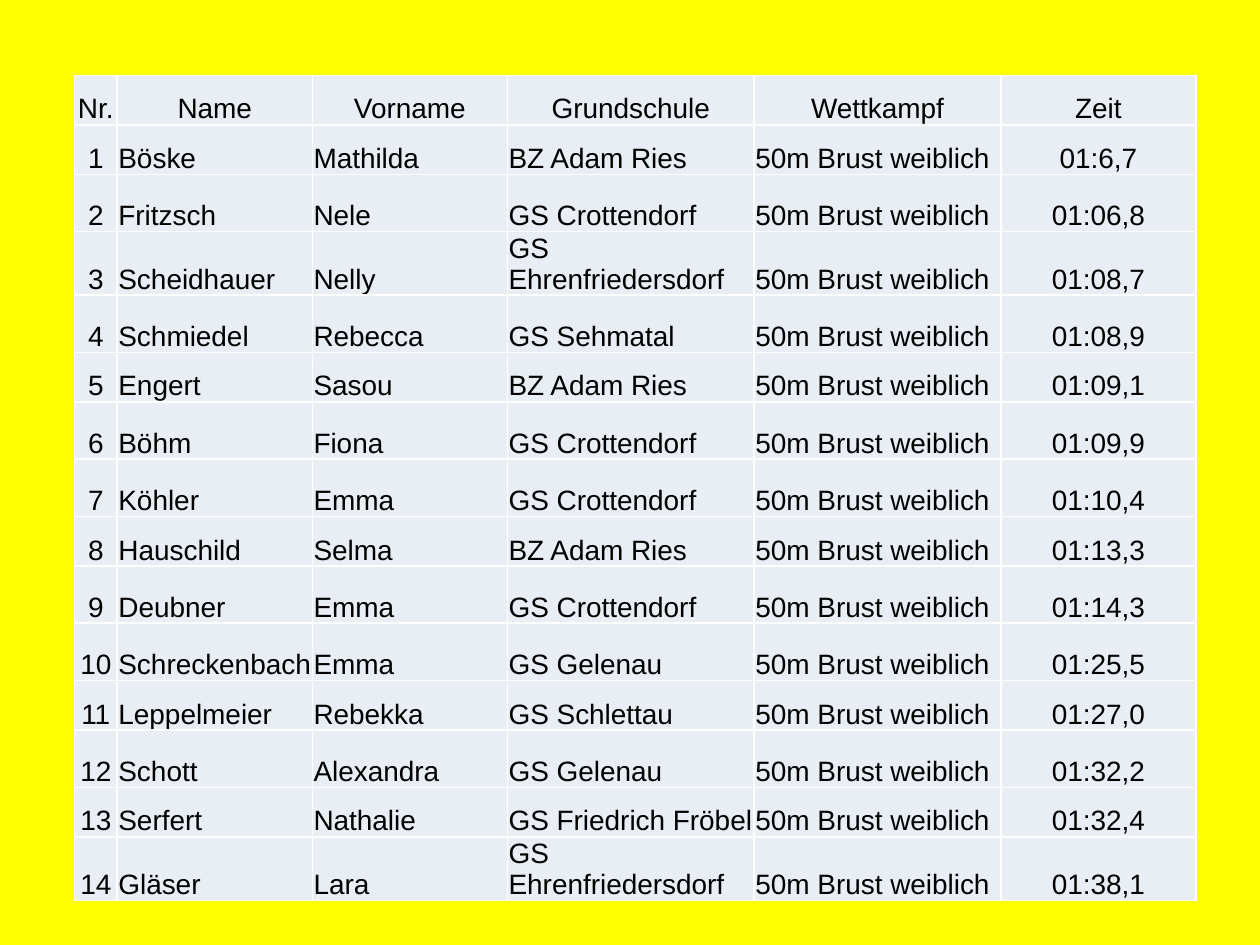
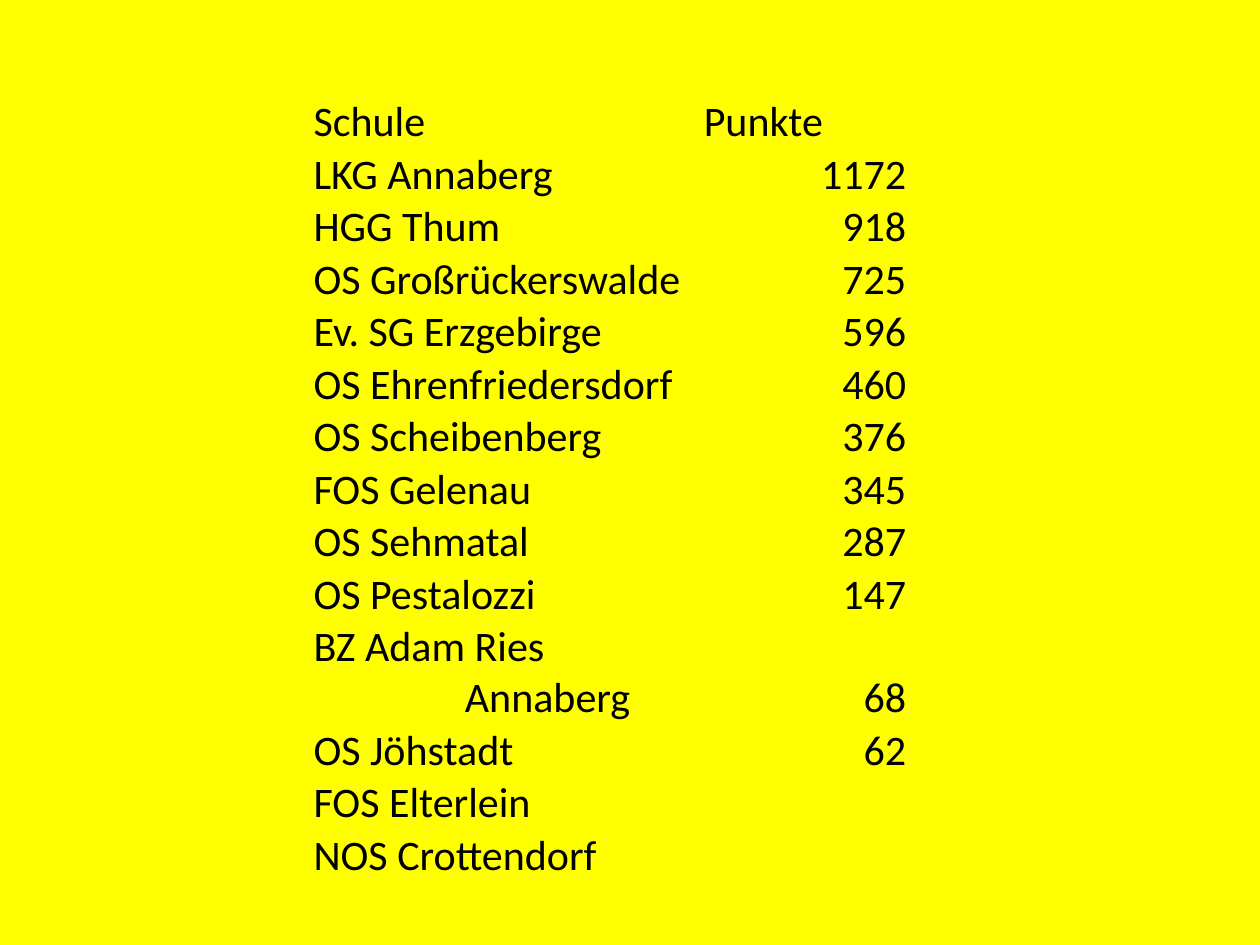
import pptx
import pptx.util
import pptx.dml.color
import pptx.enum.text
import pptx.oxml
from dataclasses import dataclass

Pt = pptx.util.Pt
PLAIN = "{2D5ABB26-0587-4C30-8999-92F81FD0307C}"
ALIGN = {
    "l": pptx.enum.text.PP_ALIGN.LEFT,
    "c": pptx.enum.text.PP_ALIGN.CENTER,
    "r": pptx.enum.text.PP_ALIGN.RIGHT,
}


@dataclass(frozen=True)
class Theme:
    page: str = "FFFF00"
    ink: str = "000000"
    cell: str = "E9EDF4"
    rule: str = "FFFFFF"
    rule_width: int = 1
    inset: float = 0.7


@dataclass(frozen=True)
class Style:
    """Look of one table; head and body give one alignment letter per column."""
    font: str
    size: int
    head: str
    body: str
    boxed: bool


THEME = Theme()
TIMES = Style("Arial", 16, "cccccc", "cllllc", True)
POINTS = Style("Calibri", 24, "ll", "lr", False)

EVENT = "50m Brust weiblich"
SWIMMERS = [
    ("Böske", "Mathilda", "BZ Adam Ries", "01:6,7"),
    ("Fritzsch", "Nele", "GS Crottendorf", "01:06,8"),
    ("Scheidhauer", "Nelly", "GS Ehrenfriedersdorf", "01:08,7"),
    ("Schmiedel", "Rebecca", "GS Sehmatal", "01:08,9"),
    ("Engert", "Sasou", "BZ Adam Ries", "01:09,1"),
    ("Böhm", "Fiona", "GS Crottendorf", "01:09,9"),
    ("Köhler", "Emma", "GS Crottendorf", "01:10,4"),
    ("Hauschild", "Selma", "BZ Adam Ries", "01:13,3"),
    ("Deubner", "Emma", "GS Crottendorf", "01:14,3"),
    ("Schreckenbach", "Emma", "GS Gelenau", "01:25,5"),
    ("Leppelmeier", "Rebekka", "GS Schlettau", "01:27,0"),
    ("Schott", "Alexandra", "GS Gelenau", "01:32,2"),
    ("Serfert", "Nathalie", "GS Friedrich Fröbel", "01:32,4"),
    ("Gläser", "Lara", "GS Ehrenfriedersdorf", "01:38,1"),
]
LOW_ROWS = {"Grundschule", "BZ Adam Ries", "GS Schlettau", "GS Friedrich Fröbel"}
SCHOOLS = [
    ("LKG Annaberg", "1172"),
    ("HGG Thum", "918"),
    ("OS Großrückerswalde", "725"),
    ("Ev. SG Erzgebirge", "596"),
    ("OS Ehrenfriedersdorf", "460"),
    ("OS Scheibenberg", "376"),
    ("FOS Gelenau", "345"),
    ("OS Sehmatal", "287"),
    ("OS Pestalozzi", "147"),
    ("BZ Adam Ries Annaberg", "68"),
    ("OS Jöhstadt", "62"),
    ("FOS Elterlein", ""),
    ("NOS Crottendorf", ""),
    ("", ""),
]


def color(code):
    return pptx.dml.color.RGBColor.from_string(code)


def add_page(deck):
    page = deck.slides.add_slide(deck.slide_layouts[6])
    fill = page.background.fill
    fill.solid()
    fill.fore_color.rgb = color(THEME.page)
    return page


def add_rules(cell):
    """Draw the border lines; must run before the cell gets its fill."""
    props = cell._tc.get_or_add_tcPr()
    for side in ("lnL", "lnR", "lnT", "lnB"):
        props.append(pptx.oxml.parse_xml(
            f'<a:{side} xmlns:a="http://schemas.openxmlformats.org/drawingml/2006/main" '
            f'w="{Pt(THEME.rule_width)}"><a:solidFill><a:srgbClr val="{THEME.rule}"/>'
            f'</a:solidFill></a:{side}>'))


def set_cell(cell, text, align, style):
    cell.margin_left = cell.margin_right = cell.margin_top = Pt(THEME.inset)
    cell.margin_bottom = 0
    cell.vertical_anchor = pptx.enum.text.MSO_ANCHOR.BOTTOM
    if style.boxed:
        add_rules(cell)
        cell.fill.solid()
        cell.fill.fore_color.rgb = color(THEME.cell)
    else:
        cell.fill.background()
    if text:
        para = cell.text_frame.paragraphs[0]
        para.alignment = ALIGN[align]
        run = para.add_run()
        run.text = text
        run.font.name = style.font
        run.font.size = Pt(style.size)
        run.font.color.rgb = color(THEME.ink)


def add_grid(page, left, top, widths, heights, rows, style):
    frame = page.shapes.add_table(len(rows), len(widths), Pt(left), Pt(top),
                                  Pt(sum(widths)), Pt(sum(heights)))
    table = frame.table
    table.first_row = table.horz_banding = False
    table._tbl.tblPr[0].text = PLAIN
    for column, width in zip(table.columns, widths):
        column.width = Pt(width)
    for i, (row, height) in enumerate(zip(rows, heights)):
        table.rows[i].height = Pt(height)
        aligns = style.body if i else style.head
        for j, (text, align) in enumerate(zip(row, aligns)):
            set_cell(table.cell(i, j), text, align, style)
    return table


def hang(cell, depth):
    """Indent the wrapped lines of a cell."""
    props = cell.text_frame.paragraphs[0]._p.get_or_add_pPr()
    props.set("marL", str(Pt(depth)))
    props.set("indent", str(-Pt(depth)))


def add_times(deck):
    rows = [("Nr.", "Name", "Vorname", "Grundschule", "Wettkampf", "Zeit")]
    for rank, (name, first, school, time) in enumerate(SWIMMERS, 1):
        rows.append((str(rank), name, first, school, EVENT, time))
    heights = [28.3 if row[3] in LOW_ROWS else 32.75 for row in rows]
    widths = [24.5, 111.5, 111.5, 141, 141, 111.5]
    add_grid(add_page(deck), 42.5, 43, widths, heights, rows, TIMES)


def add_points(deck):
    rows = [("Schule", "Punkte")] + SCHOOLS
    heights = [29.75] * len(rows)
    table = add_grid(add_page(deck), 178.5, 54.75, [223, 117], heights, rows, POINTS)
    split = [row[0] for row in rows].index("BZ Adam Ries Annaberg")
    hang(table.cell(split, 0), 86.5)


def main():
    deck = pptx.Presentation()
    deck.slide_width, deck.slide_height = Pt(720), Pt(540)
    add_times(deck)
    add_points(deck)
    deck.save("out.pptx")


if __name__ == "__main__":
    main()
